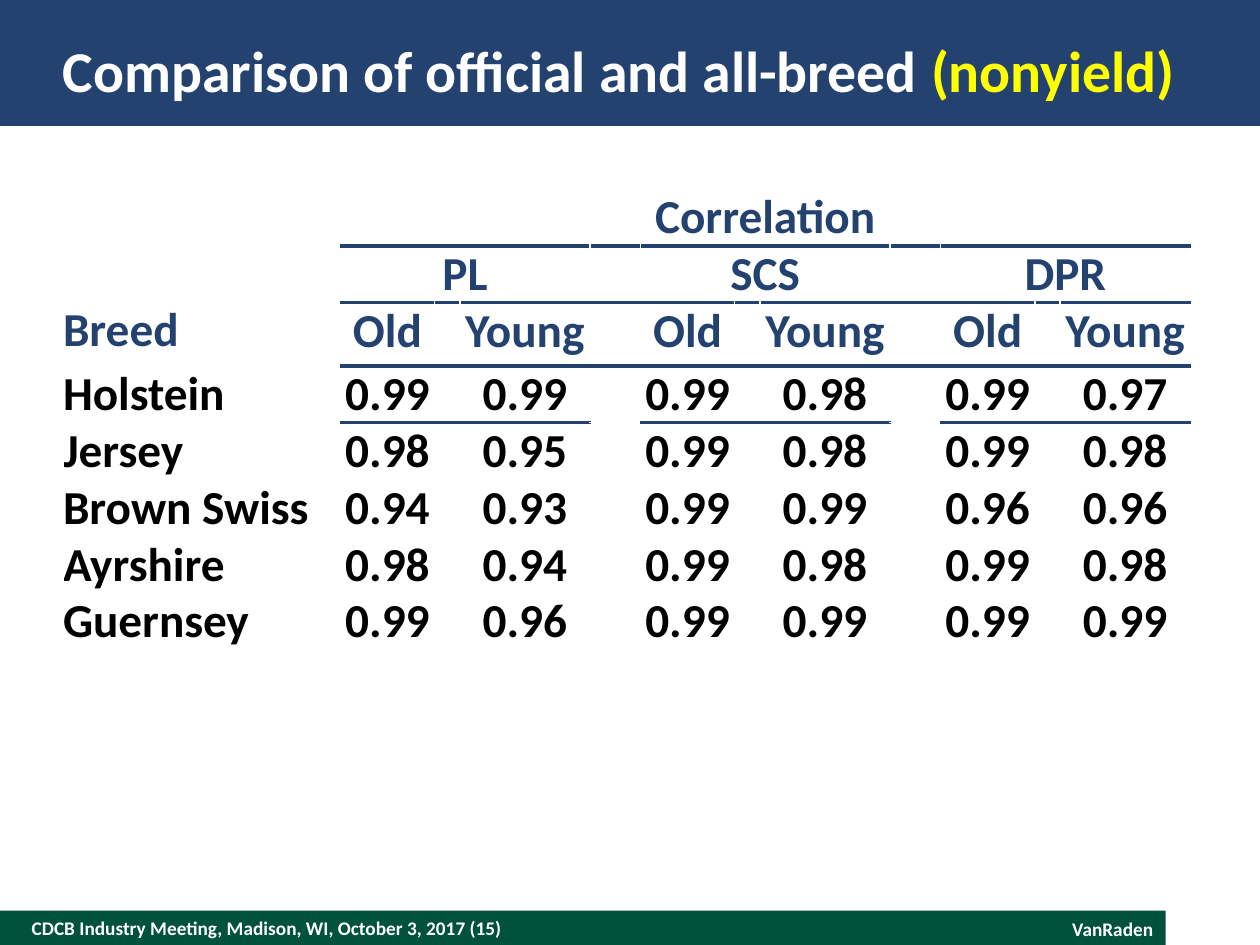
from lxml import etree
from pptx import Presentation
from pptx.dml.color import RGBColor
from pptx.enum.shapes import MSO_SHAPE
from pptx.enum.text import MSO_ANCHOR, PP_ALIGN
from pptx.oxml.ns import qn
from pptx.util import Cm, Pt

RECT = MSO_SHAPE.RECTANGLE
MID, LOW = MSO_ANCHOR.MIDDLE, MSO_ANCHOR.BOTTOM
LEFT, MIDST, RIGHT = PP_ALIGN.LEFT, PP_ALIGN.CENTER, PP_ALIGN.RIGHT
NAVY, GREEN, WHITE = "244270", "00523C", "FFFFFF"
YELLOW, BLACK = "FFFF00", "000000"

TRAITS = ["PL", "SCS", "DPR"]
BREEDS = {
    "Holstein": ["0.99", "0.99", "0.99", "0.98", "0.99", "0.97"],
    "Jersey": ["0.98", "0.95", "0.99", "0.98", "0.99", "0.98"],
    "Brown Swiss": ["0.94", "0.93", "0.99", "0.99", "0.96", "0.96"],
    "Ayrshire": ["0.98", "0.94", "0.99", "0.98", "0.99", "0.98"],
    "Guernsey": ["0.99", "0.96", "0.99", "0.99", "0.99", "0.99"],
}
GROUP = [1.9, 0.51, 2.62]  # Old, space, Young
GAP = 1.02
WIDTHS = [5.59] + GROUP + [GAP] + GROUP + [GAP] + GROUP
HEADS = 3
STARTS = [1, 5, 9]  # first column of each trait


def color(code):
    return RGBColor.from_string(code)


def write(para, runs, size, align=LEFT):
    para.alignment = align
    for text, code in runs:
        run = para.add_run()
        run.text = text
        form = {"name": "Calibri", "size": Pt(size), "bold": True}
        for key, val in form.items():
            setattr(run.font, key, val)
        run.font.color.rgb = color(code)


def add_bar(slide, box, code):
    bar = slide.shapes.add_shape(RECT, *map(Cm, box))
    bar.shadow.inherit = False
    bar.fill.solid()
    bar.fill.fore_color.rgb = color(code)
    bar.line.fill.background()


def add_text(slide, box, runs, size, align=LEFT, inset=0):
    frame = slide.shapes.add_textbox(*map(Cm, box)).text_frame
    form = {"word_wrap": True, "vertical_anchor": MID,
            "margin_left": Cm(inset), "margin_right": Cm(inset),
            "margin_top": 0, "margin_bottom": 0}
    for key, val in form.items():
        setattr(frame, key, val)
    write(frame.paragraphs[0], runs, size, align)


def fill_cell(cell, text, code=NAVY, align=MIDST, base=0):
    cell.margin_bottom = Cm(base)
    write(cell.text_frame.paragraphs[0], [(text, code)], 27, align)


def add_edge(cell, tag):
    line = etree.Element(qn(tag), w=str(Pt(2.25)))
    fill = etree.SubElement(line, qn("a:solidFill"))
    etree.SubElement(fill, qn("a:srgbClr"), val=NAVY)
    cell._tc.get_or_add_tcPr().insert(0, line)


def add_rule(table, row, cols):
    for col in cols:
        add_edge(table.cell(row, col), "a:lnB")
        add_edge(table.cell(row + 1, col), "a:lnT")


def add_grid(slide):
    count = HEADS + len(BREEDS)
    table = slide.shapes.add_table(
        count, len(WIDTHS), Cm(1.27), Cm(3.81),
        Cm(sum(WIDTHS)), Cm(9.27)).table
    table.first_row = table.horz_banding = False
    for col, width in zip(table.columns, WIDTHS):
        col.width = Cm(width)
    for num, row in enumerate(table.rows):
        row.height = Cm(1.27 if num == HEADS - 1 else 1.14)
    form = {"vertical_anchor": LOW, "margin_left": 0, "margin_right": 0,
            "margin_top": 0, "margin_bottom": 0}
    for cell in table.iter_cells():
        for key, val in form.items():
            setattr(cell, key, val)
        cell.fill.background()

    # Headings
    table.cell(0, 0).merge(table.cell(2, 0))
    table.cell(0, 1).merge(table.cell(0, len(WIDTHS) - 1))
    fill_cell(table.cell(0, 0), "Breed", align=LEFT, base=0.13)
    fill_cell(table.cell(0, 1), "Correlation")
    for col, trait in zip(STARTS, TRAITS):
        table.cell(1, col).merge(table.cell(1, col + 2))
        fill_cell(table.cell(1, col), trait)
        fill_cell(table.cell(2, col), "Old", base=0.13)
        fill_cell(table.cell(2, col + 2), "Young", base=0.13)

    # Values
    spots = [col + step for col in STARTS for step in (0, 2)]
    for row, (breed, vals) in enumerate(BREEDS.items(), HEADS):
        fill_cell(table.cell(row, 0), breed, BLACK, LEFT)
        for col, val in zip(spots, vals):
            fill_cell(table.cell(row, col), val, BLACK)

    # Rules, lowest first so that top edges precede bottom edges
    for col in STARTS:
        add_rule(table, 2, range(col, col + 3))
    for row in (1, 0):
        add_rule(table, row, range(1, len(WIDTHS)))


def main():
    deck = Presentation()
    deck.slide_width, deck.slide_height = Cm(25.4), Cm(19.05)
    slide = deck.slides.add_slide(deck.slide_layouts[6])

    # Bands
    add_bar(slide, (0, 18.36, 23.5, 0.69), GREEN)
    add_bar(slide, (0, 0, 25.4, 2.54), NAVY)

    # Footer and title
    meet = "CDCB Industry Meeting, Madison, WI, October 3, 2017 (15)"
    add_text(slide, (0.64, 18.36, 17.78, 0.69), [(meet, WHITE)], 11)
    add_text(slide, (18.42, 18.36, 5.08, 0.73), [("VanRaden", WHITE)],
             11, RIGHT, 0.25)
    add_text(slide, (1.27, 0.51, 22.86, 1.78),
             [("Comparison of official and all-breed ", WHITE),
              ("(nonyield)", YELLOW)], 33)

    add_grid(slide)
    deck.save("out.pptx")


if __name__ == "__main__":
    main()
